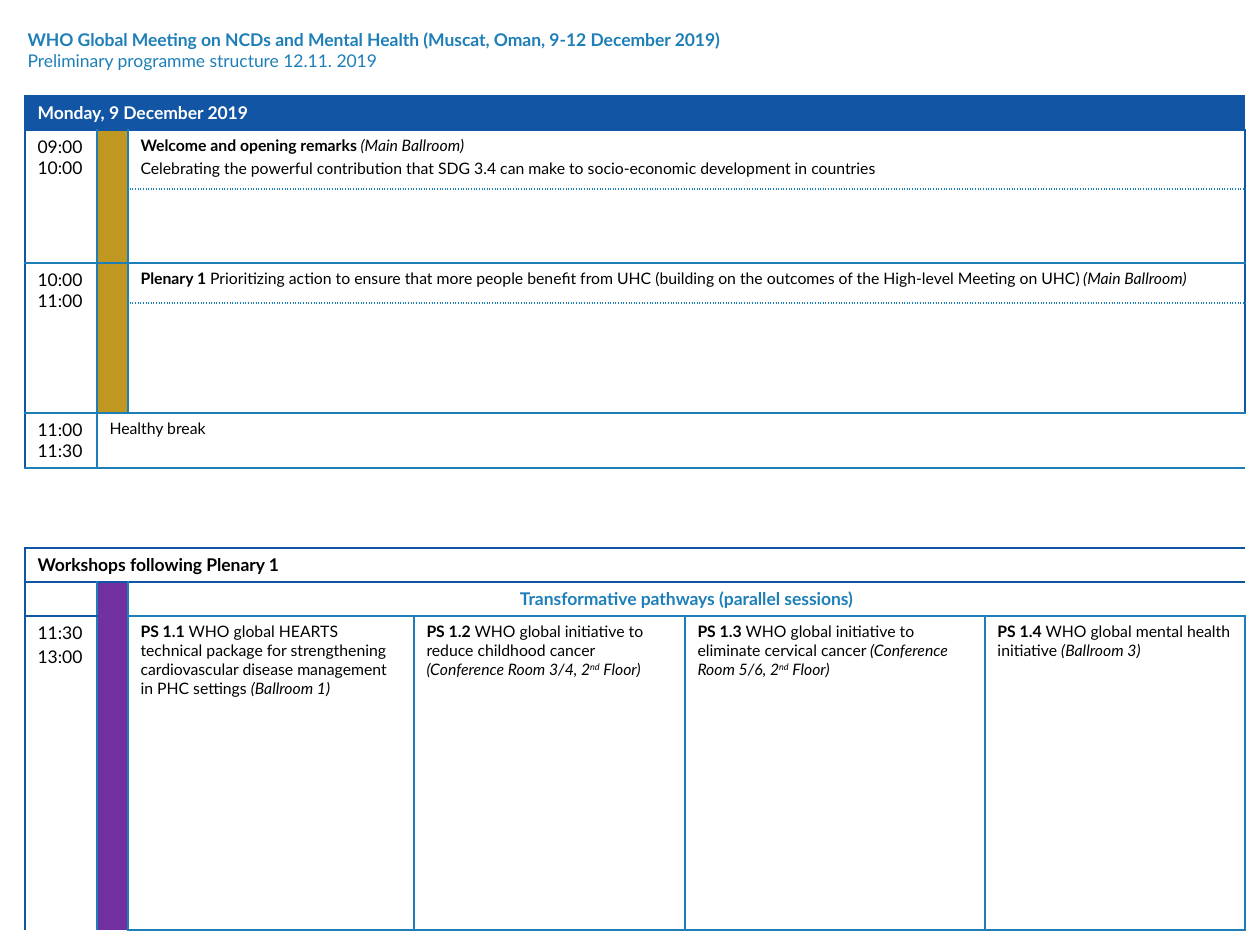
"""Build the opening-day programme of the WHO global meeting."""
import lxml.etree
import pptx
import pptx.dml.color
import pptx.enum.text
import pptx.oxml.ns
import pptx.util

PX = 914400 / 126
NAVY = pptx.dml.color.RGBColor(0x12, 0x55, 0xA4)
SKY = pptx.dml.color.RGBColor(0x1E, 0x7F, 0xB8)
GOLD = pptx.dml.color.RGBColor(0xC0, 0x97, 0x21)
PURPLE = pptx.dml.color.RGBColor(0x70, 0x30, 0xA0)
WHITE = pptx.dml.color.RGBColor(0xFF, 0xFF, 0xFF)
BLACK = pptx.dml.color.RGBColor(0, 0, 0)
PLAIN_STYLE = "{2D5ABB26-0587-4C30-8999-92F81FD0307C}"
FONT = "Lato"
DOTTED = "sysDot"


def px(length):
    return pptx.util.Emu(round(length * PX))


def write(paragraph, text, size=10, color=BLACK, bold=False, italic=False, raised=False):
    run = paragraph.add_run()
    run.text = text
    font = run.font
    font.name, font.size, font.bold, font.italic = FONT, pptx.util.Pt(size), bold, italic
    font.color.rgb = color
    if raised:
        run._r.get_or_add_rPr().set("baseline", "30000")


def add_child(parent, tag, **attributes):
    return lxml.etree.SubElement(parent, pptx.oxml.ns.qn(tag), **attributes)


class Programme:
    def __init__(self, deck):
        self.slide = deck.slides.add_slide(deck.slide_layouts[5])

    def title(self, left, top, width, height, heading, subtitle):
        box = self.slide.shapes.title
        box.left, box.top, box.width, box.height = map(px, (left, top, width, height))
        frame = box.text_frame
        frame.word_wrap = True
        frame.auto_size = pptx.enum.text.MSO_AUTO_SIZE.NONE
        frame.vertical_anchor = pptx.enum.text.MSO_ANCHOR.TOP
        for paragraph, text, bold in ((frame.paragraphs[0], heading, True),
                                      (frame.add_paragraph(), subtitle, False)):
            paragraph.alignment = pptx.enum.text.PP_ALIGN.LEFT
            write(paragraph, text, color=SKY, bold=bold)

    def table(self, left, top, widths, heights):
        frame = self.slide.shapes.add_table(
            len(heights), len(widths), px(left), px(top), px(sum(widths)), px(sum(heights)))
        table = frame.table
        table.first_row = table.horz_banding = False
        table._tbl.tblPr.find(pptx.oxml.ns.qn("a:tableStyleId")).text = PLAIN_STYLE
        for column, width in zip(table.columns, widths):
            column.width = px(width)
        for row, height in zip(table.rows, heights):
            row.height = px(height)
        return table

    def border(self, cell, side, color, dash="solid"):
        line = add_child(cell._tc.get_or_add_tcPr(), f"a:ln{side}", w="12700")
        if color is None:
            add_child(line, "a:noFill")
            return
        add_child(add_child(line, "a:solidFill"), "a:srgbClr", val=str(color))
        add_child(line, "a:prstDash", val=dash)

    def cell(self, table, row, column, *paragraphs, rows=1, columns=1, fill=WHITE, align=None,
             left=SKY, right=SKY, top=SKY, bottom=SKY, top_dash="solid", bottom_dash="solid"):
        last_row, last_column = row + rows - 1, column + columns - 1
        origin = table.cell(row, column)
        if rows * columns > 1:
            origin.merge(table.cell(last_row, last_column))
        for r in range(row, last_row + 1):
            for c in range(column, last_column + 1):
                part = table.cell(r, c)
                self.border(part, "L", left if c == column else None)
                self.border(part, "R", right if c == last_column else None)
                self.border(part, "T", top if r == row else None, top_dash)
                self.border(part, "B", bottom if r == last_row else None, bottom_dash)
                part.fill.solid()
                part.fill.fore_color.rgb = fill
                if not paragraphs or part.is_spanned:
                    add_child(part.text_frame.paragraphs[0]._p, "a:endParaRPr", sz="900")
        frame = origin.text_frame
        for index, runs in enumerate(paragraphs):
            paragraph = frame.add_paragraph() if index else frame.paragraphs[0]
            if index:
                paragraph.space_before = pptx.util.Pt(2)
            if align is not None:
                paragraph.alignment = align
            for text, style in runs:
                write(paragraph, text, **style)


TIME = {}
BODY = {"size": 9}
LEAD = {"size": 9, "bold": True}
ROOM = {"size": 9, "italic": True}
ORDINAL = {"size": 9, "italic": True, "raised": True}


def opening_day(programme):
    day = programme.table(25, 96, (72, 31, 1117), (34, 59, 74, 40, 110, 55))
    programme.cell(day, 0, 0, [("Monday, 9 December 2019", {"color": WHITE, "bold": True})],
                   columns=3, fill=NAVY, left=NAVY, right=NAVY, top=NAVY, bottom=NAVY)
    welcome = (
        [("Welcome and opening remarks ", LEAD), ("(Main Ballroom)", ROOM)],
        [("Celebrating the powerful contribution that SDG 3.4 can make to "
          "socio-economic development in countries", BODY)])
    plenary = (
        [("Plenary 1 ", LEAD),
         ("Prioritizing action to ensure that more people benefit from UHC (building on "
          "the outcomes of the High-level Meeting on UHC) ", BODY),
         ("(Main Ballroom)", ROOM)],)
    for row, hours, topic, rule in ((1, "09:00 10:00", welcome, NAVY),
                                    (3, "10:00 11:00", plenary, SKY)):
        programme.cell(day, row, 0, [(hours, TIME)], rows=2, left=NAVY, top=rule)
        programme.cell(day, row, 1, rows=2, fill=GOLD, top=rule)
        programme.cell(day, row, 2, *topic, right=NAVY, top=rule, bottom_dash=DOTTED)
        programme.cell(day, row + 1, 2, right=NAVY, top_dash=DOTTED)
    programme.cell(day, 5, 0, [("11:00 11:30", TIME)], left=NAVY)
    programme.cell(day, 5, 1, [("Healthy break", BODY)], columns=2, right=NAVY)


def workshops(programme):
    table = programme.table(25, 548, (72, 31, 286, 271, 300, 260), (34, 34, 109, 152, 53))
    programme.cell(table, 0, 0, [("Workshops following Plenary 1", {"bold": True})],
                   columns=6, left=NAVY, right=BLACK, top=NAVY, bottom=NAVY)
    programme.cell(table, 1, 0, left=NAVY, top=NAVY, bottom=NAVY)
    programme.cell(table, 1, 1, rows=4, fill=PURPLE, top=NAVY)
    programme.cell(table, 1, 2, [("Transformative pathways (parallel sessions)",
                                  {"color": SKY, "bold": True})],
                   columns=4, align=pptx.enum.text.PP_ALIGN.CENTER, right=BLACK, top=NAVY)
    programme.cell(table, 2, 0, [("11:30", TIME)], [("13:00", TIME)],
                   rows=3, left=NAVY, top=NAVY)
    sessions = (
        ("WHO global HEARTS technical package for strengthening cardiovascular disease "
         "management in PHC settings ", "(Ballroom 1)"),
        ("WHO global initiative to reduce childhood cancer ", "(Conference Room 3/4, 2"),
        ("WHO global initiative to eliminate cervical cancer ", "(Conference Room 5/6, 2"),
        ("WHO global mental health initiative ", "(Ballroom 3)"))
    for number, (topic, room) in enumerate(sessions, 1):
        runs = [(f"PS 1.{number} ", LEAD), (topic, BODY), (room, ROOM)]
        if not room.endswith(")"):
            runs += [("nd", ORDINAL), (" Floor)", ROOM)]
        programme.cell(table, 2, number + 1, runs, bottom=None)
        programme.cell(table, 3, number + 1, top=None, bottom=None)
        programme.cell(table, 4, number + 1, top=None)


def main():
    deck = pptx.Presentation()
    deck.slide_width, deck.slide_height = px(1260), px(945)
    programme = Programme(deck)
    programme.title(15, 23, 1014, 77,
                    "WHO Global Meeting on NCDs and Mental Health (Muscat, Oman, 9-12 December 2019)",
                    "Preliminary programme structure 12.11. 2019")
    opening_day(programme)
    workshops(programme)
    deck.save("out.pptx")


if __name__ == "__main__":
    main()
